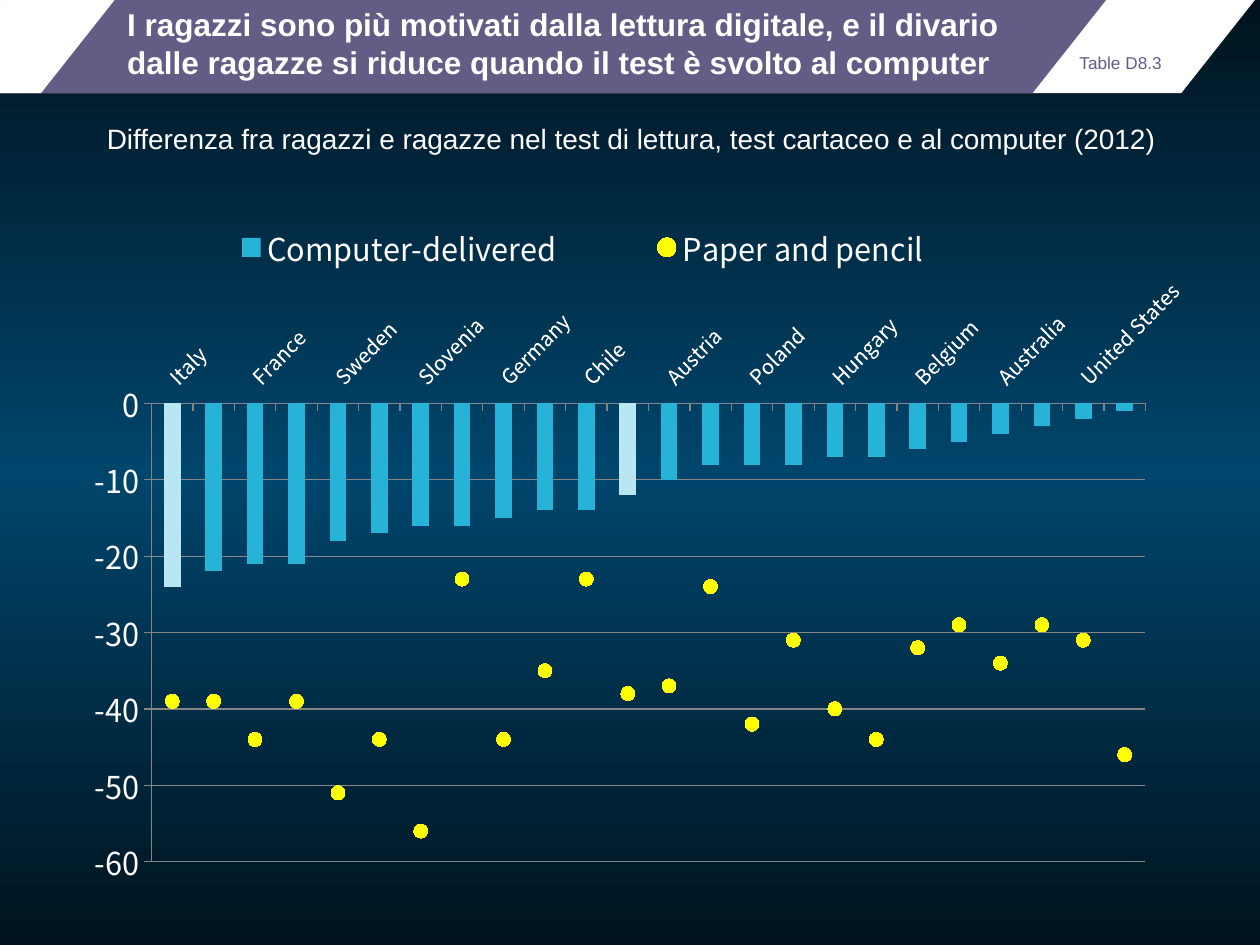
from lxml import etree
from copy import deepcopy
from pptx import Presentation
from pptx.chart.data import CategoryChartData
from pptx.dml.color import RGBColor
from pptx.enum.chart import (XL_CHART_TYPE as ChartType, XL_LEGEND_POSITION as LegendPosition,
                             XL_TICK_LABEL_POSITION as LabelPosition, XL_TICK_MARK as TickMark)
from pptx.enum.shapes import MSO_SHAPE as Shape
from pptx.enum.text import MSO_ANCHOR as Anchor, MSO_AUTO_SIZE as AutoSize, PP_ALIGN as Align
from pptx.oxml import parse_xml
from pptx.oxml.ns import nsdecls, qn
from pptx.util import Pt

COUNTRIES = ["Italy", "Portugal", "France", "Slovak Republic", "Sweden", "Israel", "Slovenia",
             "Korea", "Germany", "Canada", "Chile", "OECD average", "Austria", "Japan", "Poland",
             "Denmark", "Hungary", "Estonia", "Belgium", "Spain", "Australia", "Ireland",
             "United States", "Norway"]
COMPUTER = [-24, -22, -21, -21, -18, -17, -16, -16, -15, -14, -14, -12,
            -10, -8, -8, -8, -7, -7, -6, -5, -4, -3, -2, -1]
PAPER = [-39, -39, -44, -39, -51, -44, -56, -23, -44, -35, -23, -38,
         -37, -24, -42, -31, -40, -44, -32, -29, -34, -29, -31, -46]
HIGHLIGHTED = ["Italy", "OECD average"]

WHITE, PURPLE, GRID = "FFFFFF", "635C85", "868686"
BAR, BAR_LIGHT, MARKER = "27B3D7", "B8E6F2", "FFFF00"
BAND_HEIGHT = 53.3


def color(value):
    return RGBColor.from_string(value)


def format_font(font, size, name="Arial", fill=WHITE, bold=False):
    font.size, font.name, font.bold = Pt(size), name, bold
    font.color.rgb = color(fill)


def write(shape, text, anchor=Anchor.TOP, **font_format):
    frame = shape.text_frame
    frame.word_wrap, frame.auto_size, frame.vertical_anchor = True, AutoSize.NONE, anchor
    paragraph = frame.paragraphs[0]
    paragraph.alignment = Align.LEFT
    run = paragraph.add_run()
    run.text = text
    format_font(run.font, **font_format)


def set_layout(element, x, y, width, height, inner=False):
    """Place a chart part by fractions of the chart area."""
    for old in element.findall(qn("c:layout")):
        element.remove(old)
    target = '<c:layoutTarget val="inner"/>' if inner else ""
    layout = parse_xml(
        f'<c:layout {nsdecls("c")}><c:manualLayout>{target}'
        '<c:xMode val="edge"/><c:yMode val="edge"/>'
        f'<c:x val="{x}"/><c:y val="{y}"/><c:w val="{width}"/><c:h val="{height}"/>'
        '</c:manualLayout></c:layout>')
    element.insert(0 if inner else 1, layout)


def move_last_series_to_markers(chart, size, fill):
    """Turn the last column series into a line series that shows only its markers."""
    bar_chart = chart.plots[0]._element
    series = bar_chart.findall(qn("c:ser"))[-1]
    for tag in ("c:invertIfNegative", "c:spPr"):
        for child in series.findall(qn(tag)):
            series.remove(child)
    line_chart = parse_xml(
        f'<c:lineChart {nsdecls("c")}><c:grouping val="standard"/><c:varyColors val="0"/>'
        '<c:marker val="1"/></c:lineChart>')
    line_chart.insert(2, series)
    for axis in bar_chart.findall(qn("c:axId")):
        line_chart.append(deepcopy(axis))
    etree.SubElement(series, qn("c:smooth")).set("val", "0")
    bar_chart.addnext(line_chart)

    markers = chart.plots[1].series[0]
    markers.format.line.fill.background()
    marker = markers.marker
    marker.style, marker.size = 8, size
    marker.format.fill.solid()
    marker.format.fill.fore_color.rgb = color(fill)
    marker.format.line.color.rgb = color(fill)


class SlideBuilder:
    def __init__(self, presentation):
        self.slide = presentation.slides.add_slide(presentation.slide_layouts[5])
        self.shapes = self.slide.shapes

    def gradient_background(self, edge, middle):
        fill = self.slide.background.fill
        fill.gradient()
        fill.gradient_angle = 90
        stops = self.slide.element.find(".//" + qn("a:gsLst"))
        stops.insert(1, deepcopy(stops[0]))
        for stop, value, position in zip(fill.gradient_stops, (edge, middle, edge), (0, 0.5, 1)):
            stop.color.rgb, stop.position = color(value), position

    def band(self, left, width, fill):
        shape = self.shapes.add_shape(Shape.PARALLELOGRAM, Pt(left), Pt(0), Pt(width),
                                      Pt(BAND_HEIGHT))
        shape.adjustments[0] = 0.79
        shape.shadow.inherit = False
        shape.fill.solid()
        shape.fill.fore_color.rgb = color(fill)
        shape.line.fill.background()

    def title(self, text, left, top, width, height, **text_format):
        title = self.shapes.title
        title.left, title.top, title.width, title.height = map(Pt, (left, top, width, height))
        write(title, text, anchor=Anchor.MIDDLE, **text_format)
        title.element.getparent().append(title.element)  # in front of the bands

    def text(self, text, left, top, width, height, **text_format):
        write(self.shapes.add_textbox(*map(Pt, (left, top, width, height))), text, **text_format)

    def gap_chart(self, left, top, width, height):
        """Columns for the computer test, markers for the paper test."""
        data = CategoryChartData()
        data.categories = COUNTRIES
        data.add_series("Computer-delivered", COMPUTER)
        data.add_series("Paper and pencil", PAPER)
        chart = self.shapes.add_chart(ChartType.COLUMN_CLUSTERED,
                                      *map(Pt, (left, top, width, height)), data).chart
        chart.has_title = False
        format_font(chart.font, 18, "Noto Sans CJK KR")

        plot = chart.plots[0]
        plot.gap_width, plot.vary_by_categories = 150, False
        columns = plot.series[0]
        columns.invert_if_negative = False
        columns.format.fill.solid()
        columns.format.fill.fore_color.rgb = color(BAR)
        for country in HIGHLIGHTED:
            point_fill = columns.points[COUNTRIES.index(country)].format.fill
            point_fill.solid()
            point_fill.fore_color.rgb = color(BAR_LIGHT)
        move_last_series_to_markers(chart, 8, MARKER)

        countries, values = chart.category_axis, chart.value_axis
        values.minimum_scale, values.maximum_scale, values.major_unit = -60, 0, 10
        values.has_major_gridlines = True
        countries.tick_label_position = LabelPosition.HIGH
        format_font(countries.tick_labels.font, 12, "Noto Sans CJK KR")
        countries._element.find(qn("c:txPr")).find(qn("a:bodyPr")).set("rot", "-2700000")
        for axis in (countries, values):
            axis.major_tick_mark, axis.minor_tick_mark = TickMark.OUTSIDE, TickMark.NONE
        for part in (countries, values, values.major_gridlines):
            part.format.line.color.rgb = color(GRID)
            part.format.line.width = Pt(0.75)

        chart.has_legend = True
        chart.legend.position = LegendPosition.RIGHT
        chart.legend.include_in_layout = False
        set_layout(chart.legend._element, 0.08, 0.03, 0.79, 0.09)
        plot_area = chart._chartSpace.find(".//" + qn("c:plotArea"))
        set_layout(plot_area, 0.08, 0.3, 0.91, 0.66, inner=True)


def main():
    presentation = Presentation()
    presentation.slide_width, presentation.slide_height = Pt(720), Pt(540)
    builder = SlideBuilder(presentation)
    builder.gradient_background("00131E", "00456C")
    builder.band(-14.4, 731.5, WHITE)
    builder.band(-42.5, 674.6, PURPLE)
    builder.band(-41.8, 107.3, WHITE)
    builder.gap_chart(36.7, 111.6, 640.8, 396.7)
    builder.title("I ragazzi sono più motivati dalla lettura digitale, e il divario dalle ragazze "
                  "si riduce quando il test è svolto al computer",
                  65.5, 0, 516.2, 49, size=18, bold=True)
    builder.text("Table D8.3", 609.8, 26.6, 67.7, 26.6, size=9.8, fill=PURPLE)
    builder.text("Differenza fra ragazzi e ragazze nel test di lettura, test cartaceo e al "
                 "computer (2012)", 54, 66.2, 623.5, 33.8, size=16)
    presentation.save("out.pptx")


if __name__ == "__main__":
    main()
